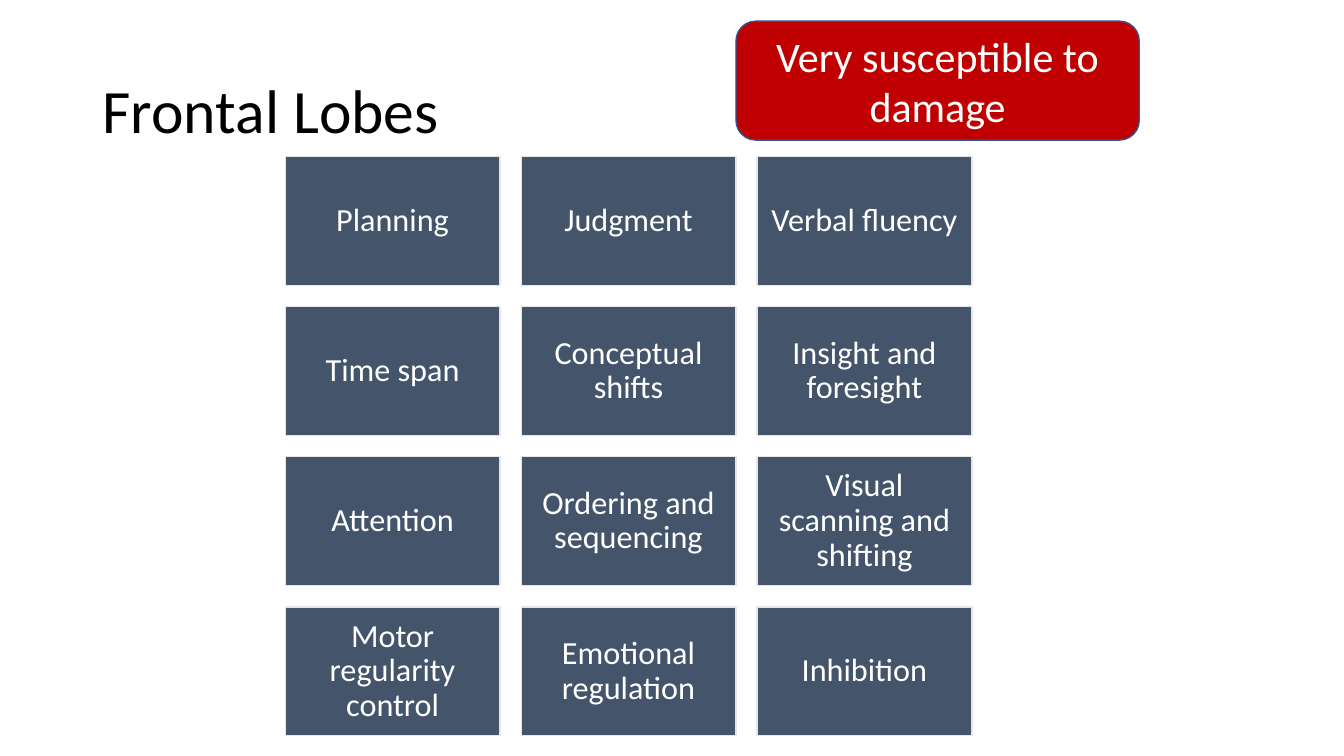
from pptx import Presentation
from pptx.dml.color import RGBColor
from pptx.enum.shapes import MSO_SHAPE
from pptx.enum.text import MSO_ANCHOR, PP_ALIGN
from pptx.util import Inches, Pt

BLACK = RGBColor(0x00, 0x00, 0x00)
WHITE = RGBColor(0xFF, 0xFF, 0xFF)
RED = RGBColor(0xC0, 0x00, 0x00)
BLUE = RGBColor(0x32, 0x54, 0x91)
SLATE = RGBColor(0x44, 0x54, 0x6A)
LIGHT_GRAY = RGBColor(0xE7, 0xE6, 0xE6)

FRONTAL_FUNCTIONS = [
    ["Planning", "Judgment", "Verbal fluency"],
    ["Time span", "Conceptual shifts", "Insight and foresight"],
    ["Attention", "Ordering and sequencing", "Visual scanning and shifting"],
    ["Motor regularity control", "Emotional regulation", "Inhibition"],
]
GRID_LEFT, GRID_TOP = 2.83, 1.55
COLUMN_STEP, ROW_STEP = 2.34, 1.49
TILE_WIDTH, TILE_HEIGHT = 2.13, 1.28


def apply_format(target, values):
    """Set each named attribute of the target."""
    for name, value in values.items():
        setattr(target, name, value)


def write_text(shape, text, size, color, alignment, line_spacing=1.0, margin=0.05):
    """Put one formatted paragraph into the shape."""
    frame = shape.text_frame
    apply_format(frame, {
        "word_wrap": True,
        "vertical_anchor": MSO_ANCHOR.MIDDLE,
        "margin_left": Inches(0.1),
        "margin_right": Inches(0.1),
        "margin_top": Inches(margin),
        "margin_bottom": Inches(margin),
    })
    paragraph = frame.paragraphs[0]
    apply_format(paragraph, {"alignment": alignment, "line_spacing": line_spacing})
    run = paragraph.add_run()
    run.text = text
    apply_format(run.font, {"name": "Calibri", "size": Pt(size)})
    run.font.color.rgb = color


def add_title(slide, text):
    """Add the slide heading."""
    title = slide.shapes.add_textbox(Inches(0.92), Inches(0.4), Inches(11.5), Inches(1.45))
    write_text(title, text, 44, BLACK, PP_ALIGN.LEFT, line_spacing=0.9)


def add_box(slide, kind, left, top, width, height, fill, outline):
    """Add a filled and outlined shape without a shadow."""
    box = slide.shapes.add_shape(kind, Inches(left), Inches(top), Inches(width), Inches(height))
    box.shadow.inherit = False
    box.fill.solid()
    box.fill.fore_color.rgb = fill
    box.line.color.rgb = outline
    box.line.width = Pt(1)
    return box


def add_callout(slide, text):
    """Add the rounded red remark."""
    callout = add_box(slide, MSO_SHAPE.ROUNDED_RECTANGLE, 7.3, 0.21, 4, 1.18, RED, BLUE)
    write_text(callout, text, 30, WHITE, PP_ALIGN.CENTER)


def add_tile_grid(slide, rows):
    """Add one tile for each function, row by row."""
    for row, labels in enumerate(rows):
        for column, label in enumerate(labels):
            left = GRID_LEFT + column * COLUMN_STEP
            top = GRID_TOP + row * ROW_STEP
            tile = add_box(slide, MSO_SHAPE.RECTANGLE, left, top,
                           TILE_WIDTH, TILE_HEIGHT, SLATE, LIGHT_GRAY)
            write_text(tile, label, 23, WHITE, PP_ALIGN.CENTER, line_spacing=0.9, margin=0.1)


def main():
    """Build and save the slide."""
    presentation = Presentation()
    apply_format(presentation, {"slide_width": Inches(13.33), "slide_height": Inches(7.5)})
    slide = presentation.slides.add_slide(presentation.slide_layouts[6])
    add_title(slide, "Frontal Lobes")
    add_callout(slide, "Very susceptible to damage")
    add_tile_grid(slide, FRONTAL_FUNCTIONS)
    presentation.save("out.pptx")


if __name__ == "__main__":
    main()
